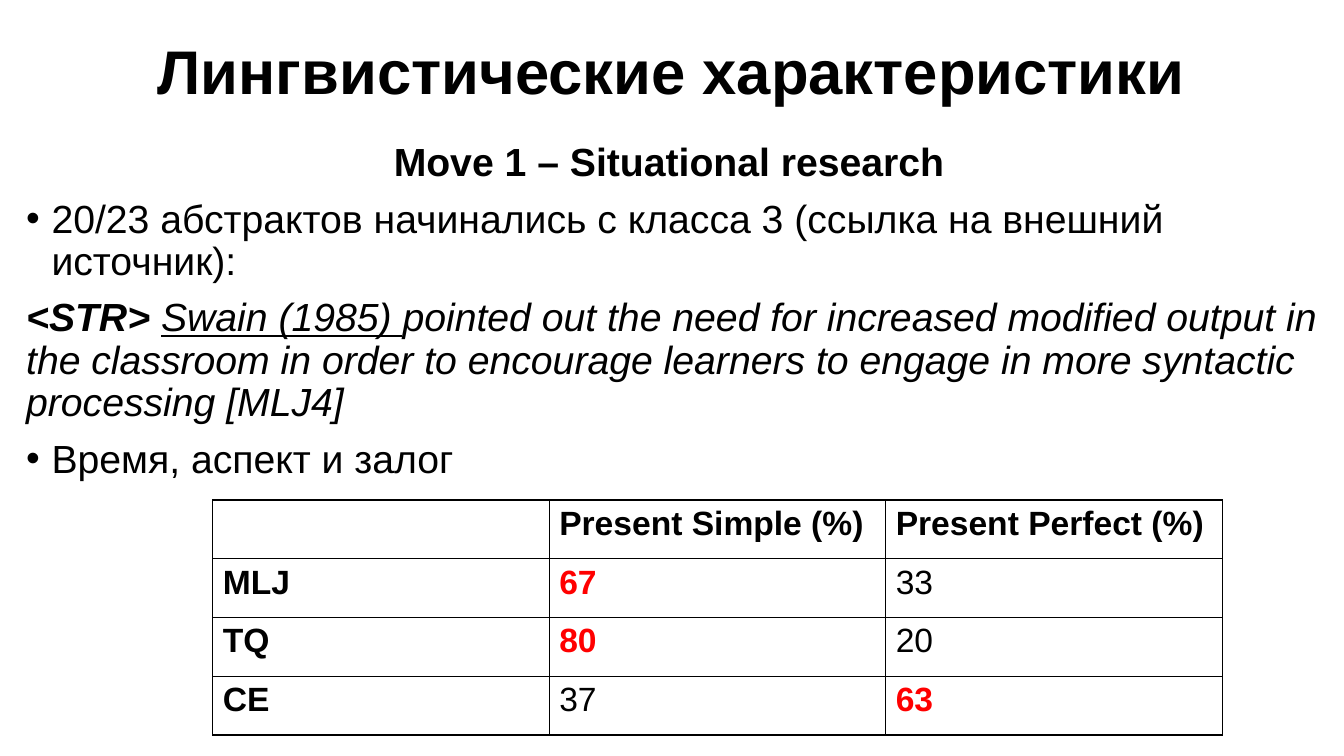
import pptx
import pptx.dml.color
import pptx.enum.text
import pptx.oxml
import pptx.oxml.ns
import pptx.util
from pptx.util import Cm

COLORS = {"text": "000000", "accent": "FF0000", "paper": "FFFFFF", "border": "000000"}
FONT = "Arial"
INDENT = Cm(0.64)
CENTER = pptx.enum.text.PP_ALIGN.CENTER
MIDDLE = pptx.enum.text.MSO_ANCHOR.MIDDLE


def rgb(name):
    return pptx.dml.color.RGBColor.from_string(COLORS[name])


def add_run(p, text, size, color="text", bold=False, italic=False, underline=False):
    r = p.add_run()
    r.text = text
    r.font.name = FONT
    r.font.size = pptx.util.Pt(size)
    r.font.color.rgb = rgb(color)
    r.font.bold = bold
    r.font.italic = italic
    r.font.underline = underline


def add_bullet(p):
    pPr = p._p.get_or_add_pPr()
    pPr.set("marL", str(INDENT))
    pPr.set("indent", str(-INDENT))
    ns = pptx.oxml.ns.nsdecls("a")
    pPr.append(pptx.oxml.parse_xml(f'<a:buFont {ns} typeface="{FONT}"/>'))
    pPr.append(pptx.oxml.parse_xml(f'<a:buChar {ns} char="•"/>'))


def add_text(s, box, size, paragraphs, anchor=None):
    """Each paragraph is (kind, runs), each run (text, style)."""
    tf = s.shapes.add_textbox(*box).text_frame
    tf.word_wrap = True
    tf.vertical_anchor = anchor
    for i, (kind, runs) in enumerate(paragraphs):
        p = tf.add_paragraph() if i else tf.paragraphs[0]
        p.line_spacing = 0.9
        if i:
            p.space_before = pptx.util.Pt(10)
        if kind == "center":
            p.alignment = CENTER
        elif kind == "bullet":
            add_bullet(p)
        for text, style in runs:
            add_run(p, text, size, **style)


def set_borders(cell):
    tcPr = cell._tc.get_or_add_tcPr()
    for i, side in enumerate(("lnL", "lnR", "lnT", "lnB")):
        tcPr.insert(i, pptx.oxml.parse_xml(
            f'<a:{side} {pptx.oxml.ns.nsdecls("a")} w="12700"><a:solidFill>'
            f'<a:srgbClr val="{COLORS["border"]}"/></a:solidFill></a:{side}>'))


def add_table(s, left, top, col_width, row_height, rows):
    n_rows, n_cols = len(rows), len(rows[0])
    table = s.shapes.add_table(n_rows, n_cols, left, top,
                               col_width * n_cols, row_height * n_rows).table
    for col in table.columns:
        col.width = col_width
    for i, row in enumerate(rows):
        table.rows[i].height = row_height
        for j, value in enumerate(row):
            cell = table.cell(i, j)
            cell.fill.solid()
            cell.fill.fore_color.rgb = rgb("paper")
            set_borders(cell)
            if not value:
                continue
            # The larger share in each row stands out
            is_top = i > 0 and j > 0 and value == max(row[1:])
            add_run(cell.text_frame.paragraphs[0], str(value), 24,
                    color="accent" if is_top else "text",
                    bold=i == 0 or j == 0 or is_top)


def main():
    prs = pptx.Presentation()
    prs.slide_width, prs.slide_height = Cm(33.87), Cm(19.05)
    s = prs.slides.add_slide(prs.slide_layouts[6])

    # Title
    add_text(s, (Cm(0), Cm(0.05), Cm(33.87), Cm(3.68)), 44,
             [("center", [("Лингвистические характеристики", {"bold": True})])], MIDDLE)

    # Body
    add_text(s, (Cm(0.41), Cm(3.48), Cm(33.17), Cm(14.55)), 28, [
        ("center", [("Move 1 – Situational research ", {"bold": True})]),
        ("bullet", [("20/23 абстрактов начинались с класса 3 "
                     "(ссылка на внешний источник):", {})]),
        ("plain", [("<STR> ", {"bold": True, "italic": True}),
                   ("Swain (1985) ", {"italic": True, "underline": True}),
                   ("pointed out the need for increased modified output in the "
                    "classroom in order to encourage learners to engage in more "
                    "syntactic processing [MLJ4]", {"italic": True})]),
        ("bullet", [("Время, аспект и залог", {})]),
    ])

    # Tense shares
    add_table(s, Cm(5.36), Cm(12.6), Cm(8.48), Cm(1.48), [
        ("", "Present Simple (%)", "Present Perfect (%)"),
        ("MLJ", 67, 33),
        ("TQ", 80, 20),
        ("CE", 37, 63),
    ])

    prs.save("out.pptx")


if __name__ == "__main__":
    main()
